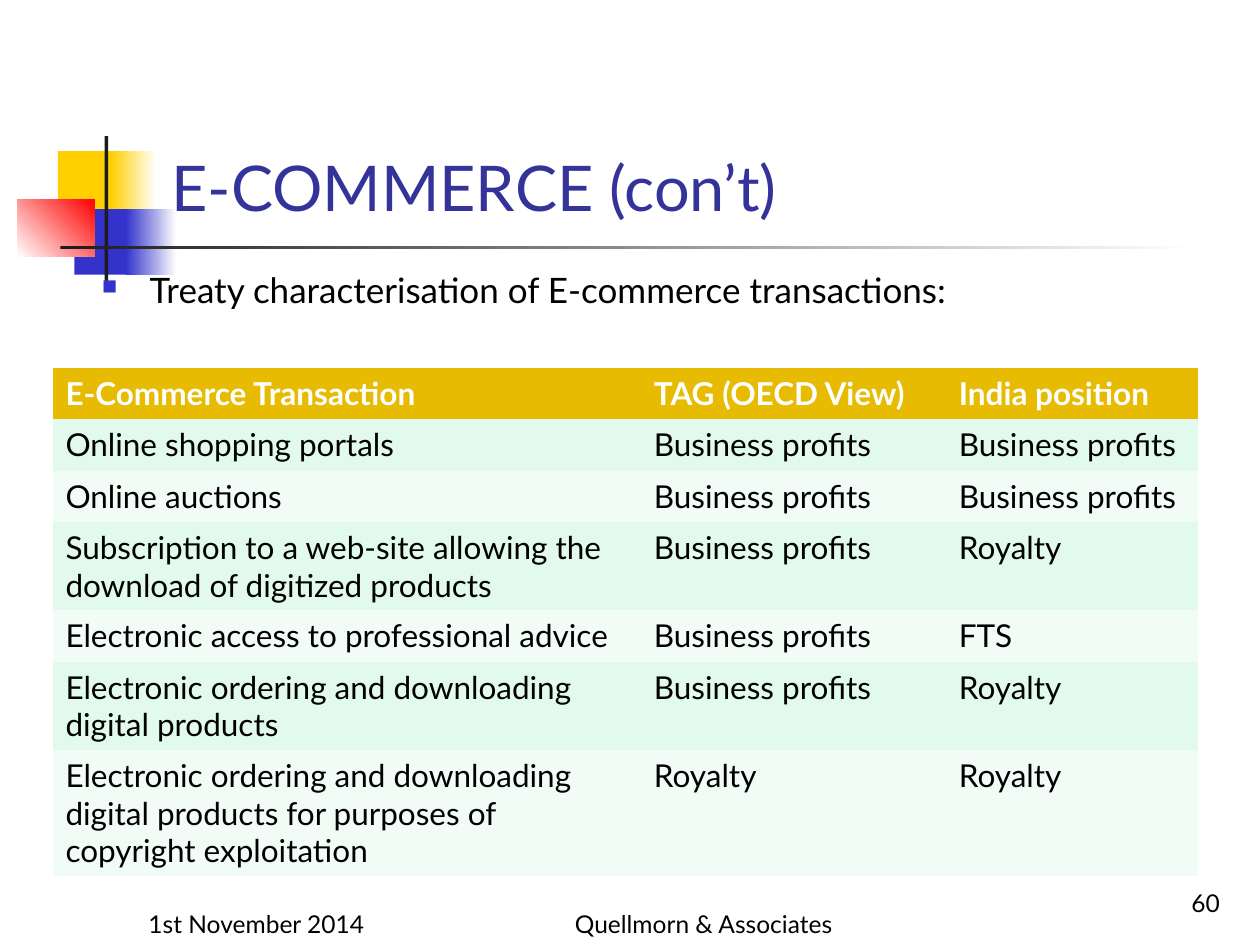
from typing import NamedTuple, Optional

from lxml.etree import SubElement
from pptx import Presentation
from pptx.dml.color import RGBColor
from pptx.enum.shapes import MSO_SHAPE as Shape
from pptx.enum.text import MSO_ANCHOR as Anchor, PP_ALIGN as Align
from pptx.oxml.ns import qn
from pptx.util import Inches, Pt

FONT = "Lato"
WHITE = RGBColor(0xFF, 0xFF, 0xFF)
BLACK = RGBColor(0x00, 0x00, 0x00)
YELLOW = RGBColor(0xFF, 0xCF, 0x01)
BLUE = RGBColor(0x33, 0x33, 0xCC)
RED = RGBColor(0xFF, 0x00, 0x00)
CHARCOAL = RGBColor(0x1C, 0x1C, 0x1C)
INDIGO = RGBColor(0x33, 0x33, 0x99)
GOLD = RGBColor(0xE7, 0xBB, 0x01)
MINT = RGBColor(0xE2, 0xF9, 0xEE)
PALE_MINT = RGBColor(0xF1, 0xFC, 0xF7)

SLIDE_W, SLIDE_H = Inches(10), Inches(7.5)


class Box(NamedTuple):
    """Left, top, width and height in percent of the slide's size."""
    x: float
    y: float
    w: float
    h: float

    def emu(self) -> tuple:
        sizes = (SLIDE_W, SLIDE_H, SLIDE_W, SLIDE_H)
        return tuple(round(v * size / 100) for v, size in zip(self, sizes))


class Block(NamedTuple):
    box: Box
    start: RGBColor
    end: Optional[RGBColor] = None  # set for a gradient
    angle: float = 0


class Label(NamedTuple):
    box: Box
    text: str
    align: Align


BLOCKS = [
    Block(Box(4.6, 16, 4.8, 6.93), YELLOW),
    Block(Box(8.8, 16, 3.6, 6.93), YELLOW, WHITE),
    Block(Box(5.9, 22.13, 4.6, 6.93), BLUE),
    Block(Box(10, 22.13, 4, 6.93), BLUE, WHITE),
    Block(Box(1.4, 21.07, 6.1, 6.13), WHITE, RED, 45),
    Block(Box(8.3, 14.4, 0.3, 15.33), CHARCOAL),
    Block(Box(4.8, 26, 90, 0.4), CHARCOAL, WHITE),
]
LABELS = [
    Label(Box(10.8, 93.33, 20.8, 6.67), "1st November 2014", Align.LEFT),
    Label(Box(40, 93.33, 31.7, 6.67), "Quellmorn & Associates", Align.CENTER),
    Label(Box(77, 91.07, 20.8, 6.67), "60", Align.RIGHT),
]
TITLE_BOX = Box(12.6, 3.07, 85.2, 21.33)
BODY_BOX = Box(7.1, 27.73, 90.4, 65.6)

PROFITS, ROYALTY = "Business profits", "Royalty"
ORDERING = "Electronic ordering and downloading digital products"
ROWS = [
    ("E-Commerce Transaction", "TAG (OECD View)", "India position"),
    ("Online shopping portals", PROFITS, PROFITS),
    ("Online auctions", PROFITS, PROFITS),
    ("Subscription to a web-site allowing the download of digitized products",
     PROFITS, ROYALTY),
    ("Electronic access to professional advice", PROFITS, "FTS"),
    (ORDERING, PROFITS, ROYALTY),
    (f"{ORDERING} for purposes of copyright exploitation", ROYALTY, ROYALTY),
]
COL_SHARES = (46.7, 24.2, 20)
ROW_SHARE = 5.44
TABLE_BOX = Box(4.2, 38.93, sum(COL_SHARES), ROW_SHARE * len(ROWS))


def write(tf, text: str, size: float, color: RGBColor,
          bold: bool = False, align: Align = Align.LEFT):
    p = tf.paragraphs[0]
    p.alignment = align
    r = p.add_run()
    r.text = text
    for name, value in {"name": FONT, "size": Pt(size), "bold": bold}.items():
        setattr(r.font, name, value)
    r.font.color.rgb = color
    return p


def add_block(s, block: Block) -> None:
    sp = s.shapes.add_shape(Shape.RECTANGLE, *block.box.emu())
    sp.shadow.inherit = False
    sp.line.fill.background()
    if block.end is None:
        sp.fill.solid()
        sp.fill.fore_color.rgb = block.start
        return
    sp.fill.gradient()
    sp.fill.gradient_angle = block.angle
    for stop, color in zip(sp.fill.gradient_stops, (block.start, block.end)):
        stop.color.rgb = color


def add_label(s, label: Label) -> None:
    tf = s.shapes.add_textbox(*label.box.emu()).text_frame
    tf.word_wrap = True
    tf.vertical_anchor = Anchor.BOTTOM
    write(tf, label.text, 14, BLACK, align=label.align)


def set_title(s, text: str) -> None:
    title = s.shapes.title
    title.left, title.top, title.width, title.height = TITLE_BOX.emu()
    title.text_frame.vertical_anchor = Anchor.BOTTOM
    write(title.text_frame, text, 36, INDIGO)


def add_bullet(s, text: str) -> None:
    tf = s.shapes.add_textbox(*BODY_BOX.emu()).text_frame
    tf.word_wrap = True
    p = write(tf, text, 20, BLACK)
    p.space_before = Pt(4)
    pPr = p._p.get_or_add_pPr()
    indent = Inches(0.38)
    pPr.set("marL", str(indent))
    pPr.set("indent", str(-indent))
    color = SubElement(pPr, qn("a:buClr"))
    SubElement(color, qn("a:srgbClr"), val=str(BLUE))
    SubElement(pPr, qn("a:buSzPct"), val="60000")
    SubElement(pPr, qn("a:buChar"), char="■")


def add_treaty_table(s) -> None:
    table = s.shapes.add_table(len(ROWS), len(COL_SHARES), *TABLE_BOX.emu()).table
    for col, share in zip(table.columns, COL_SHARES):
        col.width = round(SLIDE_W * share / 100)
    for i, texts in enumerate(ROWS):
        table.rows[i].height = round(SLIDE_H * ROW_SHARE / 100)
        header = i == 0
        fill = GOLD if header else (MINT if i % 2 else PALE_MINT)
        for j, text in enumerate(texts):
            cell = table.cell(i, j)
            cell.fill.solid()
            cell.fill.fore_color.rgb = fill
            write(cell.text_frame, text, 18, WHITE if header else BLACK, header)
    # The cells carry their own fills, so the style's banding is off
    table.first_row = table.horz_banding = False
    tblPr = table._tbl.tblPr
    tblPr.find(qn("a:tableStyleId")).text = "{2D5ABB26-0587-4C30-8999-92F81FD0307C}"


def main() -> None:
    prs = Presentation()
    prs.slide_width, prs.slide_height = SLIDE_W, SLIDE_H
    s = prs.slides.add_slide(prs.slide_layouts[5])

    # Corner decoration and title rule
    for block in BLOCKS:
        add_block(s, block)

    # Title, lead-in and table
    set_title(s, "E-COMMERCE (con’t)")
    add_bullet(s, "Treaty characterisation of E-commerce transactions:")
    add_treaty_table(s)

    # Footer
    for label in LABELS:
        add_label(s, label)

    # The title stands in front of the decoration
    s.shapes._spTree.append(s.shapes.title._element)
    prs.save("out.pptx")


if __name__ == "__main__":
    main()
